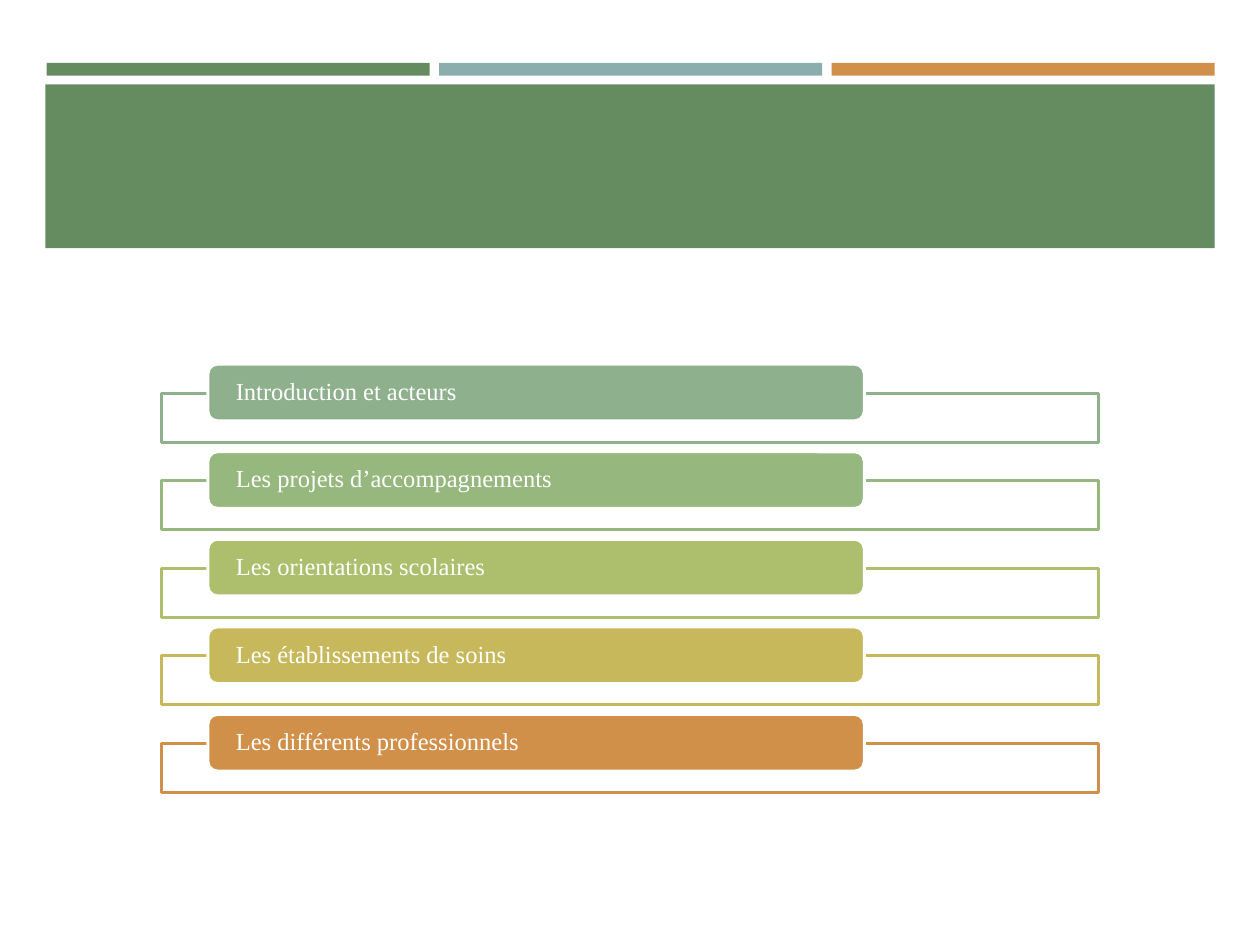
from dataclasses import dataclass

from lxml import etree
from pptx import Presentation
from pptx.dml.color import RGBColor
from pptx.enum.shapes import MSO_SHAPE
from pptx.enum.text import MSO_ANCHOR, PP_ALIGN
from pptx.oxml.ns import qn
from pptx.util import Inches, Pt

RECT = MSO_SHAPE.RECTANGLE
ROUND = MSO_SHAPE.ROUNDED_RECTANGLE
MIDDLE = MSO_ANCHOR.MIDDLE
LEFT = PP_ALIGN.LEFT

WHITE = RGBColor(0xFF, 0xFF, 0xFF)
GREEN = RGBColor(0x64, 0x8C, 0x60)
BLUE = RGBColor(0x8C, 0xAD, 0xAE)
ORANGE = RGBColor(0xD1, 0x90, 0x49)
SAGE = RGBColor(0x8F, 0xB0, 0x8C)
LEAF = RGBColor(0x96, 0xB7, 0x7D)
LIME = RGBColor(0xAD, 0xBF, 0x6C)
GOLD = RGBColor(0xC7, 0xB9, 0x5B)

WIDTH, HEIGHT = 10, 7.5
EDGE = 0.37
BAR = 3.04
BAR_STEP = (WIDTH - 2 * EDGE + 0.01 - BAR) / 2
ROW_TOP = 2.89
ROW_STEP = 2.78 / 4
FRAME_DROP = 0.23

FONT = {"name": "Times New Roman", "size": Pt(14)}
FRAME = {
    "margin_left": Inches(0.2),
    "margin_right": Inches(0.2),
    "margin_top": 0,
    "margin_bottom": 0,
    "vertical_anchor": MIDDLE,
    "word_wrap": True,
}
PARA = {"alignment": LEFT, "line_spacing": 0.9}


@dataclass
class Box:
    left: float
    top: float
    width: float
    height: float


@dataclass
class Topic:
    label: str
    color: RGBColor


BARS = [GREEN, BLUE, ORANGE]
TOPICS = [
    Topic("Introduction et acteurs", SAGE),
    Topic("Les projets d’accompagnements", LEAF),
    Topic("Les orientations scolaires", LIME),
    Topic("Les établissements de soins", GOLD),
    Topic("Les différents professionnels", ORANGE),
]


def apply(item, style: dict) -> None:
    for key, value in style.items():
        setattr(item, key, value)


def draw(slide, kind, box: Box, fill: RGBColor, line: RGBColor | None = None):
    sides = (box.left, box.top, box.width, box.height)
    shape = slide.shapes.add_shape(kind, *map(Inches, sides))
    shape.shadow.inherit = False
    shape.fill.solid()
    shape.fill.fore_color.rgb = fill
    if line is None:
        shape.line.fill.background()
    else:
        shape.line.color.rgb = line
        shape.line.width = Pt(1.75)
    return shape


def fade(shape, share: int) -> None:
    color = shape.fill._xPr.find(qn("a:solidFill"))[0]
    etree.SubElement(color, qn("a:alpha")).set("val", str(share * 1000))


def write(shape, label: str) -> None:
    apply(shape.text_frame, FRAME)
    para = shape.text_frame.paragraphs[0]
    apply(para, PARA)
    run = para.add_run()
    run.text = label
    apply(run.font, FONT)
    run.font.color.rgb = WHITE


def draw_topic(slide, row: int, topic: Topic) -> None:
    top = ROW_TOP + row * ROW_STEP
    frame = draw(slide, RECT, Box(1.28, top + FRAME_DROP, 7.44, 0.39), WHITE, topic.color)
    fade(frame, 90)
    pill = draw(slide, ROUND, Box(1.65, top, 5.21, 0.45), topic.color, WHITE)
    write(pill, topic.label)


def main() -> None:
    deck = Presentation()
    deck.slide_width, deck.slide_height = Inches(WIDTH), Inches(HEIGHT)
    slide = deck.slides.add_slide(deck.slide_layouts[6])
    for col, color in enumerate(BARS):
        draw(slide, RECT, Box(EDGE + col * BAR_STEP, 0.5, BAR, 0.1), color)
    draw(slide, RECT, Box(0.36, 0.67, 9.28, 1.3), GREEN)
    for row, topic in enumerate(TOPICS):
        draw_topic(slide, row, topic)
    deck.save("out.pptx")


if __name__ == "__main__":
    main()
